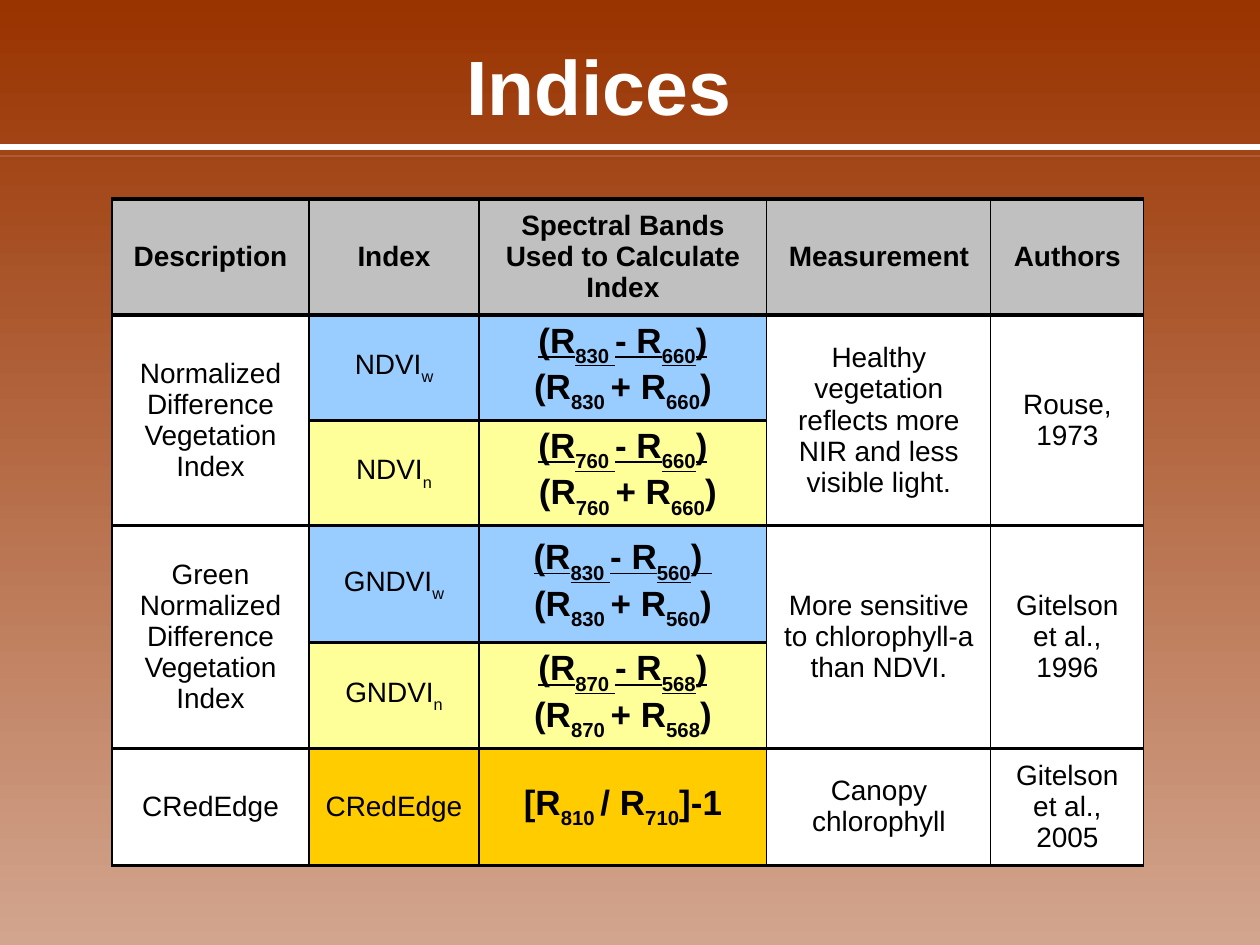
from lxml.etree import SubElement
from pptx import Presentation
from pptx.dml.color import RGBColor
from pptx.enum.shapes import MSO_CONNECTOR, MSO_SHAPE
from pptx.enum.text import MSO_ANCHOR, PP_ALIGN
from pptx.oxml.ns import qn
from pptx.util import Pt

PX = 914400 / 126
FONT = "Arial"
COLORS = {
    "top": "993300", "bottom": "D2A58E", "white": "FFFFFF", "black": "000000",
    "header": "C0C0C0", "wide": "99CCFF", "narrow": "FFFF99", "red_edge": "FFCC00",
}
LABEL = {"size": Pt(16), "bold": False}
HEADING = {"size": Pt(16), "bold": True}
FORMULA = {"size": Pt(20), "bold": True}

COLUMNS = [197, 170, 288, 224, 153]
ROWS = [116, 101, 100, 117, 100, 117]
HEADINGS = ["Description", "Index", "Spectral Bands Used to Calculate Index",
            "Measurement", "Authors"]
# Text between a pair of ~ marks is subscript; None continues the cell above.
INDICES = [
    ("wide", "Normalized Difference Vegetation Index", "NDVI~w~",
     ["(R~830 ~- R~660~)", "(R~830 ~+ R~660~)"],
     "Healthy vegetation reflects more NIR and less visible light.", ["Rouse, 1973"]),
    ("narrow", None, "NDVI~n~",
     ["(R~760 ~- R~660~)", " (R~760 ~+ R~660~)"], None, None),
    ("wide", "Green Normalized Difference Vegetation Index", "GNDVI~w~",
     ["(R~830 ~- R~560~) ", "(R~830 ~+ R~560~)"],
     "More sensitive to chlorophyll-a than NDVI.", ["Gitelson", "et al., 1996"]),
    ("narrow", None, "GNDVI~n~",
     ["(R~870 ~- R~568~)", "(R~870 ~+ R~568~)"], None, None),
    ("red_edge", "CRedEdge", "CRedEdge", ["[R~810 ~/ R~710~]-1"],
     "Canopy chlorophyll", ["Gitelson", "et al., 2005"]),
]


def px(length):
    return round(length * PX)


def rgb(name):
    return RGBColor.from_string(COLORS[name])


def write_runs(paragraph, marked_text, color, **formats):
    """Write centred text, lowering the parts between ~ marks."""
    paragraph.alignment = PP_ALIGN.CENTER
    for position, part in enumerate(marked_text.split("~")):
        if not part:
            continue
        run = paragraph.add_run()
        run.text = part
        run.font.name = FONT
        run.font.color.rgb = rgb(color)
        for attribute, value in formats.items():
            setattr(run.font, attribute, value)
        if position % 2:
            run.font._element.set("baseline", "-30000")


def set_border(cell, side, width):
    line = SubElement(cell._tc.get_or_add_tcPr(), qn(f"a:ln{side}"), w=str(Pt(width)))
    fill = SubElement(line, qn("a:solidFill"))
    SubElement(fill, qn("a:srgbClr"), val=COLORS["black"])


def fill_cell(cell, lines, fill, formats, fraction=False):
    cell.vertical_anchor = MSO_ANCHOR.MIDDLE
    cell.fill.solid()
    cell.fill.fore_color.rgb = rgb(fill)
    frame = cell.text_frame
    for number, line in enumerate(lines):
        paragraph = frame.add_paragraph() if number else frame.paragraphs[0]
        write_runs(paragraph, line, "black", underline=fraction and number == 0, **formats)


def add_background(slide):
    fill = slide.background.fill
    fill.gradient()
    fill.gradient_angle = 270
    for stop, name in zip(fill.gradient_stops, ("top", "bottom")):
        stop.color.rgb = rgb(name)


def add_header(slide, left, top, width, height):
    title = slide.shapes.title
    title.left, title.top, title.width, title.height = map(px, (left, top, width, height))
    title.text_frame.vertical_anchor = MSO_ANCHOR.MIDDLE
    write_runs(title.text_frame.paragraphs[0], "Indices", "white", size=Pt(44), bold=True)


def add_rules(slide, top, width):
    rule = slide.shapes.add_connector(MSO_CONNECTOR.STRAIGHT, 0, px(top), px(width), px(top))
    rule.line.color.rgb = rgb("white")
    rule.line.width = Pt(3)
    SubElement(rule._element.spPr, qn("a:effectLst"))

    hairline = slide.shapes.add_shape(MSO_SHAPE.RECTANGLE, 0, px(top + 9), px(width), 0)
    hairline.shadow.inherit = False
    hairline.fill.solid()
    hairline.fill.fore_color.rgb = rgb("white")
    hairline.line.fill.background()


def add_index_table(slide, left, top):
    table = slide.shapes.add_table(len(ROWS), len(COLUMNS), px(left), px(top),
                                   px(sum(COLUMNS)), px(sum(ROWS))).table
    table.first_row = table.horz_banding = False
    for column, width in zip(table.columns, COLUMNS):
        column.width = px(width)
    for row, height in zip(table.rows, ROWS):
        row.height = px(height)

    for row, (_, description, *_) in enumerate(INDICES, start=1):
        if description is None:
            for column in (0, 3, 4):
                table.cell(row - 1, column).merge(table.cell(row, column))

    for row in range(len(ROWS)):
        for column in range(len(COLUMNS)):
            cell = table.cell(row, column)
            set_border(cell, "L", 1.5 if column == 2 else 0.75)
            set_border(cell, "R", 1.5 if column == 1 else 0.75)
            if not cell.is_spanned:
                set_border(cell, "T", 2)
            set_border(cell, "B", 2)

    for column, heading in enumerate(HEADINGS):
        fill_cell(table.cell(0, column), [heading], "header", HEADING)
    for row, (band, description, index, formula, meaning, authors) in enumerate(INDICES, start=1):
        fill_cell(table.cell(row, 1), [index], band, LABEL)
        fill_cell(table.cell(row, 2), formula, band, FORMULA, fraction=len(formula) > 1)
        if description is not None:
            for column, lines in ((0, [description]), (3, [meaning]), (4, authors)):
                fill_cell(table.cell(row, column), lines, "white", LABEL)


def main():
    deck = Presentation()
    deck.slide_width, deck.slide_height = px(1260), px(945)
    slide = deck.slides.add_slide(deck.slide_layouts[5])
    add_background(slide)
    add_header(slide, 116, 32, 966, 105)
    add_rules(slide, 147, 1260)
    add_index_table(slide, 112, 199)
    deck.save("out.pptx")


if __name__ == "__main__":
    main()
